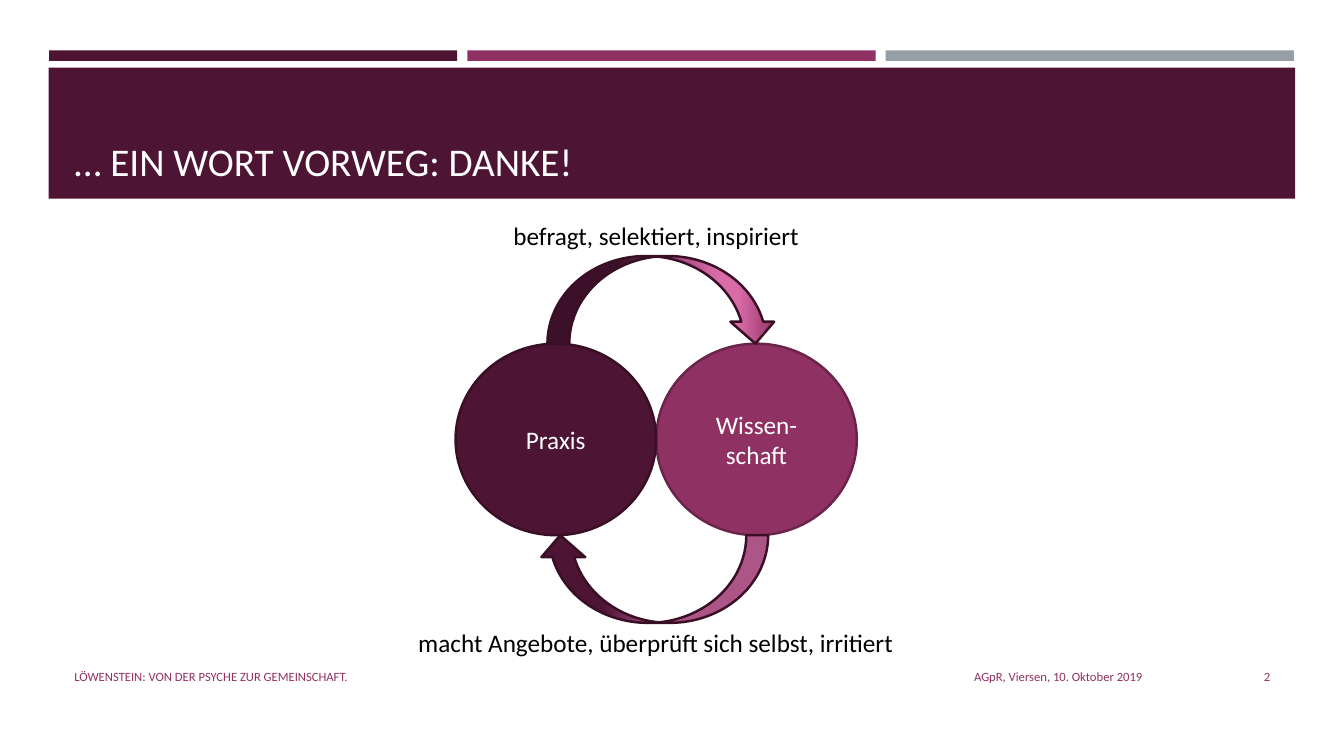
from copy import deepcopy
from dataclasses import dataclass

from pptx import Presentation
from pptx.dml.color import RGBColor
from pptx.enum.shapes import MSO_SHAPE
from pptx.enum.text import MSO_ANCHOR, MSO_AUTO_SIZE, PP_ALIGN
from pptx.util import Pt

RECTANGLE, ELLIPSE = MSO_SHAPE.RECTANGLE, MSO_SHAPE.OVAL
CURVED_ARROW = MSO_SHAPE.CURVED_DOWN_ARROW
TOP, MIDDLE, BOTTOM = MSO_ANCHOR.TOP, MSO_ANCHOR.MIDDLE, MSO_ANCHOR.BOTTOM
LEFT, CENTER, RIGHT = PP_ALIGN.LEFT, PP_ALIGN.CENTER, PP_ALIGN.RIGHT
NO_AUTOFIT = MSO_AUTO_SIZE.NONE
TITLE_ONLY = 5


@dataclass(frozen=True)
class Theme:
    font: str = "Calibri"
    title_size: int = 28
    body_size: int = 18
    footer_size: int = 9
    outline_width: float = 1.75
    plum: str = "4D1434"
    plum_edge: str = "390F26"
    berry: str = "903163"
    berry_edge: str = "6B2449"
    pink: str = "D96BA9"
    gray: str = "969FA7"
    white: str = "FFFFFF"
    black: str = "000000"


THEME = Theme()


def color(code):
    return RGBColor.from_string(code)


def write(shape, text, size, code, align=CENTER, anchor=MIDDLE):
    frame = shape.text_frame
    frame.text = text
    frame.word_wrap = True
    frame.auto_size = NO_AUTOFIT
    frame.vertical_anchor = anchor
    paragraph = frame.paragraphs[0]
    paragraph.alignment = align
    paragraph.font.name = THEME.font
    paragraph.font.size = Pt(size)
    paragraph.font.color.rgb = color(code)


def add_figure(page, kind, bounds, fill=None, edge=None):
    shape = page.shapes.add_shape(kind, *map(Pt, bounds))
    shape.shadow.inherit = False
    if fill:
        shape.fill.solid()
        shape.fill.fore_color.rgb = color(fill)
    if edge:
        shape.line.color.rgb = color(edge)
        shape.line.width = Pt(THEME.outline_width)
    else:
        shape.line.fill.background()
    return shape


def add_circle(page, bounds, text, fill, edge):
    circle = add_figure(page, ELLIPSE, bounds, fill, edge)
    write(circle, text, THEME.body_size, THEME.white)


def add_arrow(page, bounds, stops, angle=0):
    """Add a curved arrow, turned by angle, with (percent, color) gradient stops."""
    arrow = add_figure(page, CURVED_ARROW, bounds, edge=THEME.plum_edge)
    arrow.rotation = angle
    fill = arrow.fill
    fill.gradient()
    fill.gradient_angle = angle
    stop_list = fill.gradient_stops[0]._gs.getparent()
    for _ in range(len(stops) - len(fill.gradient_stops)):
        stop_list.append(deepcopy(stop_list[0]))
    for stop, (percent, code) in zip(fill.gradient_stops, stops):
        stop.position = percent / 100
        stop.color.rgb = color(code)


def add_label(page, bounds, text, size, code, align=CENTER, anchor=TOP):
    box = page.shapes.add_textbox(*map(Pt, bounds))
    write(box, text, size, code, align, anchor)


def add_header(page, text):
    bar_width, bar_step = 291.6, 298.8
    for column, fill in enumerate((THEME.plum, THEME.berry, THEME.gray)):
        add_figure(page, RECTANGLE,
                   (35 + column * bar_step, 36, bar_width, 7.5), fill)
    band = add_figure(page, RECTANGLE, (34.8, 48.4, 890.4, 93.6), THEME.plum)
    title = page.shapes.title
    band._element.addnext(title._element)
    title.left, title.top, title.width, title.height = map(
        Pt, (46, 55.4, 868.3, 80))
    write(title, text, THEME.title_size, THEME.white, LEFT, BOTTOM)


def add_cycle(page):
    left, top, width, height = 325.4, 245.5, 143.3, 136.8
    arrow_width, arrow_height = 164.2, 62.6
    add_circle(page, (left + width, top, width, height), "Wissen-schaft",
               THEME.berry, THEME.berry_edge)
    add_circle(page, (left, top, width, height), "Praxis",
               THEME.plum, THEME.plum_edge)
    add_arrow(page, (391, top - arrow_height, arrow_width, arrow_height),
              [(30, THEME.plum), (74, THEME.pink),
               (83, THEME.pink), (100, THEME.berry)])
    add_arrow(page, (384.5, top + height, arrow_width, arrow_height),
              [(28, THEME.plum), (62, THEME.pink)], angle=180)
    add_label(page, (left, 154, 2 * width, 51),
              "befragt, selektiert, inspiriert", THEME.body_size, THEME.black)
    add_label(page, (251.3, 444.5, 434.2, 29),
              "macht Angebote, überprüft sich selbst, irritiert",
              THEME.body_size, THEME.black)


def add_footer(page):
    for left, width, text, align in (
        (599, 224, "AGpR, Viersen, 10. Oktober 2019", RIGHT),
        (46, 544.3, "LÖWENSTEIN: VON DER PSYCHE ZUR GEMEINSCHAFT.", LEFT),
        (831.6, 82.8, "2", RIGHT),
    ):
        add_label(page, (left, 468.7, width, 28.8), text,
                  THEME.footer_size, THEME.berry, align, MIDDLE)


def main():
    deck = Presentation()
    deck.slide_width, deck.slide_height = Pt(960), Pt(540)
    page = deck.slides.add_slide(deck.slide_layouts[TITLE_ONLY])
    add_header(page, "… EIN WORT VORWEG: DANKE!")
    add_cycle(page)
    add_footer(page)
    deck.save("out.pptx")


if __name__ == "__main__":
    main()
